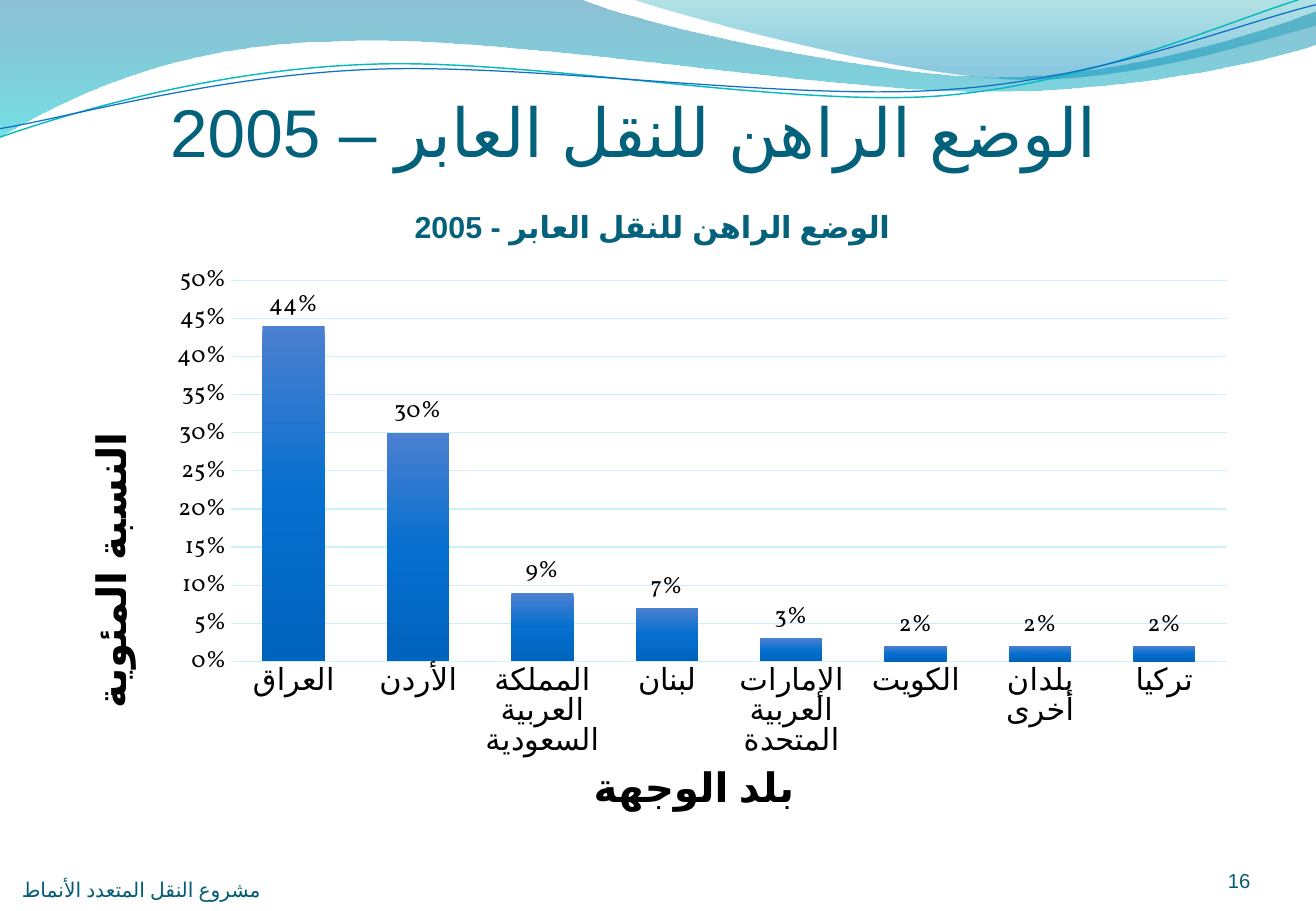
"""Build the slide on transit transport in 2005 with its column chart."""
from dataclasses import dataclass

from lxml import etree
from pptx import Presentation
from pptx.chart.data import CategoryChartData
from pptx.dml.color import RGBColor
from pptx.enum.chart import XL_CHART_TYPE, XL_LABEL_POSITION, XL_TICK_MARK
from pptx.enum.lang import MSO_LANGUAGE_ID
from pptx.enum.text import MSO_ANCHOR, PP_ALIGN
from pptx.oxml.ns import qn
from pptx.util import Cm, Pt

COLUMNS = XL_CHART_TYPE.COLUMN_CLUSTERED
OUTSIDE_END = XL_LABEL_POSITION.OUTSIDE_END
NO_TICK = XL_TICK_MARK.NONE
ARABIC = MSO_LANGUAGE_ID.ARABIC
LEFT, CENTER, RIGHT = PP_ALIGN.LEFT, PP_ALIGN.CENTER, PP_ALIGN.RIGHT
BOTTOM = MSO_ANCHOR.BOTTOM
CHART_FONT = "Vollkorn"
COLORS = {
    "title": "04617B", "footer": "045D75", "text": "000000", "grid": "C7F1FD",
    "teal_line": "0AB8BF", "blue_line": "0F6FC6",
    "wave_top": "0074A1", "wave_bottom": "00C6CF",
    "crest_top": "00A1A9", "crest_bottom": "008BBF",
    "bar_top": "4C80D0", "bar_middle": "066FCF", "bar_bottom": "0063BD",
}
SHARES = {
    "العراق": 0.44, "الأردن": 0.3, "المملكة العربية السعودية": 0.09, "لبنان": 0.07,
    "الإمارات العربية المتحدة": 0.03, "الكويت": 0.02, "بلدان أخرى": 0.02, "تركيا": 0.02,
}


@dataclass(frozen=True)
class Stop:
    """A gradient stop; position and opacity are percentages."""
    position: int
    color: str
    opacity: int = 100


@dataclass(frozen=True)
class Wave:
    """A decorative outline in cm: pairs are corners, sextets are Bezier curves."""
    start: tuple
    segments: tuple
    stops: tuple = ()
    line: str = ""
    width: float = 0


@dataclass(frozen=True)
class Label:
    """A text box in cm."""
    text: str
    box: tuple
    size: int
    color: str
    align: PP_ALIGN
    font: str = "Arial"
    complex_font: str = ""
    rtl: bool = False


WAVES = (
    Wave((0, -0.03), (
        (12.12, -0.03), (13.08, 0.43, 18.26, 1.6, 20.88, 1.6),
        (23.47, 1.6, 26.37, 0.66, 27.51, 0.23), (27.56, 0.91),
        (27.05, 1.12, 23.93, 1.93, 20.52, 1.91), (17.12, 1.91, 10.52, 0.71, 7.09, 0.86),
        (3.56, 0.89, 1.27, 2.11, -0.03, 2.87)),
        stops=(Stop(0, "wave_top", 45), Stop(100, "wave_bottom", 55))),
    Wave((13.18, -0.03), (
        (14.02, 0.28, 18.77, 1.57, 21.16, 1.65), (23.55, 1.75, 26.47, 0.81, 27.51, 0.53),
        (27.51, 0)),
        stops=(Stop(0, "crest_top", 30), Stop(80, "crest_bottom", 45))),
    Wave((0, 2.87), (
        (1.32, 2.41, 4.34, 1.47, 7.62, 1.35), (10.87, 1.19, 16.31, 2.24, 19.61, 2.01),
        (22.91, 1.75, 25.83, 0.36, 27.46, -0.1)), line="teal_line", width=0.85),
    Wave((0, 2.69), (
        (1.3, 2.49, 4.5, 1.57, 7.8, 1.45), (11.07, 1.32, 16.43, 2.11, 19.71, 1.88),
        (23.01, 1.68, 25.91, 0.48, 27.51, 0.1)), line="blue_line", width=0.75),
)
LABELS = (
    Label("الوضع الراهن للنقل العابر – 2005", (2.24, 1.24, 22.02, 2.34), 40, "title",
          CENTER, "Calibri", "Arial", True),
    Label("مشروع النقل المتعدد الأنماط", (0.46, 17.83, 10.08, 1.02), 12, "footer", LEFT),
    Label("16", (23.85, 17.65, 2.29, 1.02), 12, "footer", RIGHT),
)


def rgb(name: str) -> RGBColor:
    """Look up a named colour."""
    return RGBColor.from_string(COLORS[name])


def bend(outline, segments: tuple) -> None:
    """Join the corners of each sextet into one Bezier curve."""
    corners = iter(outline.findall(qn("a:lnTo")))
    for segment in segments:
        first = next(corners)
        if len(segment) == 6:
            first.tag = qn("a:cubicBezTo")
            for corner in (next(corners), next(corners)):
                first.append(corner[0])
                outline.remove(corner)


def paint_gradient(properties, stops: tuple) -> None:
    """Swap a solid fill for a top-to-bottom gradient."""
    gradient = etree.Element(qn("a:gradFill"), rotWithShape="1")
    stop_list = etree.SubElement(gradient, qn("a:gsLst"))
    for stop in stops:
        entry = etree.SubElement(stop_list, qn("a:gs"), pos=str(stop.position * 1000))
        color = etree.SubElement(entry, qn("a:srgbClr"), val=COLORS[stop.color])
        if stop.opacity < 100:
            etree.SubElement(color, qn("a:alpha"), val=str(stop.opacity * 1000))
    etree.SubElement(gradient, qn("a:lin"), ang="5400000", scaled="0")
    properties.replace(properties.find(qn("a:solidFill")), gradient)


def draw_wave(page, wave: Wave) -> None:
    """Draw one wave, filled or as a line."""
    builder = page.shapes.build_freeform(*(Cm(value) for value in wave.start), scale=1.0)
    points = [(Cm(x), Cm(y)) for segment in wave.segments
              for x, y in zip(segment[::2], segment[1::2])]
    builder.add_line_segments(points, close=bool(wave.stops))
    shape = builder.convert_to_shape()
    bend(next(shape._element.iter(qn("a:path"))), wave.segments)
    shape.shadow.inherit = False
    if wave.stops:
        shape.line.fill.background()
        shape.fill.solid()
        paint_gradient(shape._element.spPr, wave.stops)
    else:
        shape.fill.background()
        shape.line.color.rgb = rgb(wave.line)
        shape.line.width = Pt(wave.width)


def style_text(para, size: int, color: str, font: str, complex_font: str,
               bold: bool, rtl: bool) -> None:
    """Format the runs of a paragraph, complex script included."""
    if rtl:
        para._p.get_or_add_pPr().set("rtl", "1")
    for span in para.runs:
        span.font.size, span.font.bold, span.font.name = Pt(size), bold, font
        span.font.color.rgb = rgb(color)
        span.font.language_id = ARABIC
        if complex_font:
            etree.SubElement(span._r.get_or_add_rPr(), qn("a:cs"), typeface=complex_font)


def draw_label(page, label: Label) -> None:
    """Draw one text box."""
    frame = page.shapes.add_textbox(*(Cm(value) for value in label.box)).text_frame
    frame.word_wrap, frame.vertical_anchor = True, BOTTOM
    frame.margin_left = frame.margin_right = frame.margin_top = frame.margin_bottom = 0
    frame.text = label.text
    para = frame.paragraphs[0]
    para.alignment = label.align
    style_text(para, label.size, label.color, label.font, label.complex_font, False, label.rtl)


def set_layout(parent, index: int, **values: float) -> None:
    """Fix the place of a chart part as fractions of the chart."""
    layout = parent.find(qn("c:layout"))
    if layout is not None:
        parent.remove(layout)
    layout = etree.Element(qn("c:layout"))
    manual = etree.SubElement(layout, qn("c:manualLayout"))
    if "w" in values:
        etree.SubElement(manual, qn("c:layoutTarget"), val="inner")
    for key in ("x", "y"):
        etree.SubElement(manual, qn(f"c:{key}Mode"), val="edge")
    for key, value in values.items():
        etree.SubElement(manual, qn(f"c:{key}"), val=str(value))
    parent.insert(index, layout)


def set_title(title, text: str, size: int, color: str, x: float, y: float) -> None:
    """Write and place a chart or axis title."""
    title.text_frame.text = text
    style_text(title.text_frame.paragraphs[0], size, color, "Arial", "Arial", True, True)
    set_layout(title._element, 1, x=x, y=y)


def draw_chart(page) -> None:
    """Draw the column chart of shares by destination."""
    data = CategoryChartData(number_format="0%")
    data.categories = list(SHARES)
    data.add_series("Series 1", list(SHARES.values()))
    box = (Cm(value) for value in (1.37, 3.94, 24.77, 13.74))
    chart = page.shapes.add_chart(COLUMNS, *box, data).chart
    chart.has_legend = False
    chart.font.name, chart.font.size, chart.font.color.rgb = CHART_FONT, Pt(10), rgb("text")
    set_title(chart.chart_title, "الوضع الراهن للنقل العابر - 2005", 18, "title", 0.29, 0.02)
    set_layout(chart._chartSpace.chart.plotArea, 0, x=0.14, y=0.14, w=0.84, h=0.58)

    category, value = chart.category_axis, chart.value_axis
    set_title(category.axis_title, "بلد الوجهة", 24, "text", 0.44, 0.86)
    set_title(value.axis_title, "النسبة المئوية", 24, "text", 0.01, 0.36)
    value.axis_title.text_frame._txBody.bodyPr.set("rot", "-5400000")
    value.minimum_scale, value.maximum_scale, value.major_unit = 0, 0.5, 0.05
    value.tick_labels.number_format, value.tick_labels.number_format_is_linked = "0%", False
    value.format.line.fill.background()
    for axis, size in ((category, 18), (value, 14)):
        axis.major_tick_mark = axis.minor_tick_mark = NO_TICK
        font = axis.tick_labels.font
        font.size, font.name, font.color.rgb = Pt(size), CHART_FONT, rgb("text")
    for line in (category.format.line, value.major_gridlines.format.line):
        line.color.rgb, line.width = rgb("grid"), Pt(0.75)

    plot = chart.plots[0]
    plot.gap_width, plot.overlap, plot.vary_by_categories = 100, -24, False
    plot.has_data_labels = True
    labels = plot.data_labels
    labels.show_value, labels.position = True, OUTSIDE_END
    labels.number_format, labels.number_format_is_linked = "0%", False
    labels.font.size, labels.font.name, labels.font.color.rgb = Pt(14), CHART_FONT, rgb("text")
    series = plot.series[0]
    series.format.fill.solid()
    paint_gradient(series._element.find(qn("c:spPr")), (
        Stop(0, "bar_top"), Stop(50, "bar_middle"), Stop(100, "bar_bottom")))


def main() -> None:
    """Build and save the deck."""
    deck = Presentation()
    deck.slide_width, deck.slide_height = Cm(27.51), Cm(19.05)
    page = deck.slides.add_slide(deck.slide_layouts[6])
    for wave in WAVES:
        draw_wave(page, wave)
    for label in LABELS:
        draw_label(page, label)
    draw_chart(page)
    deck.save("out.pptx")


if __name__ == "__main__":
    main()
